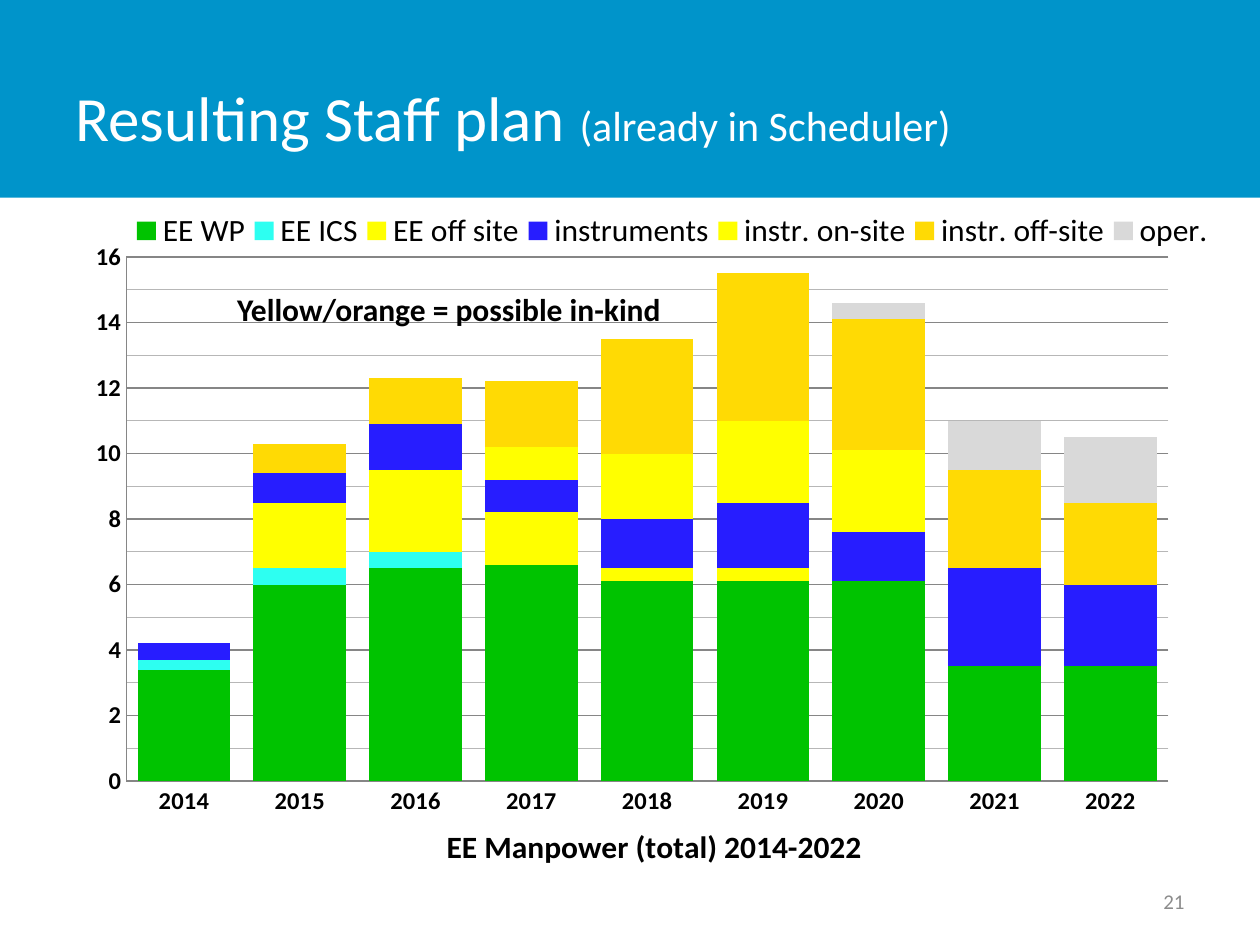
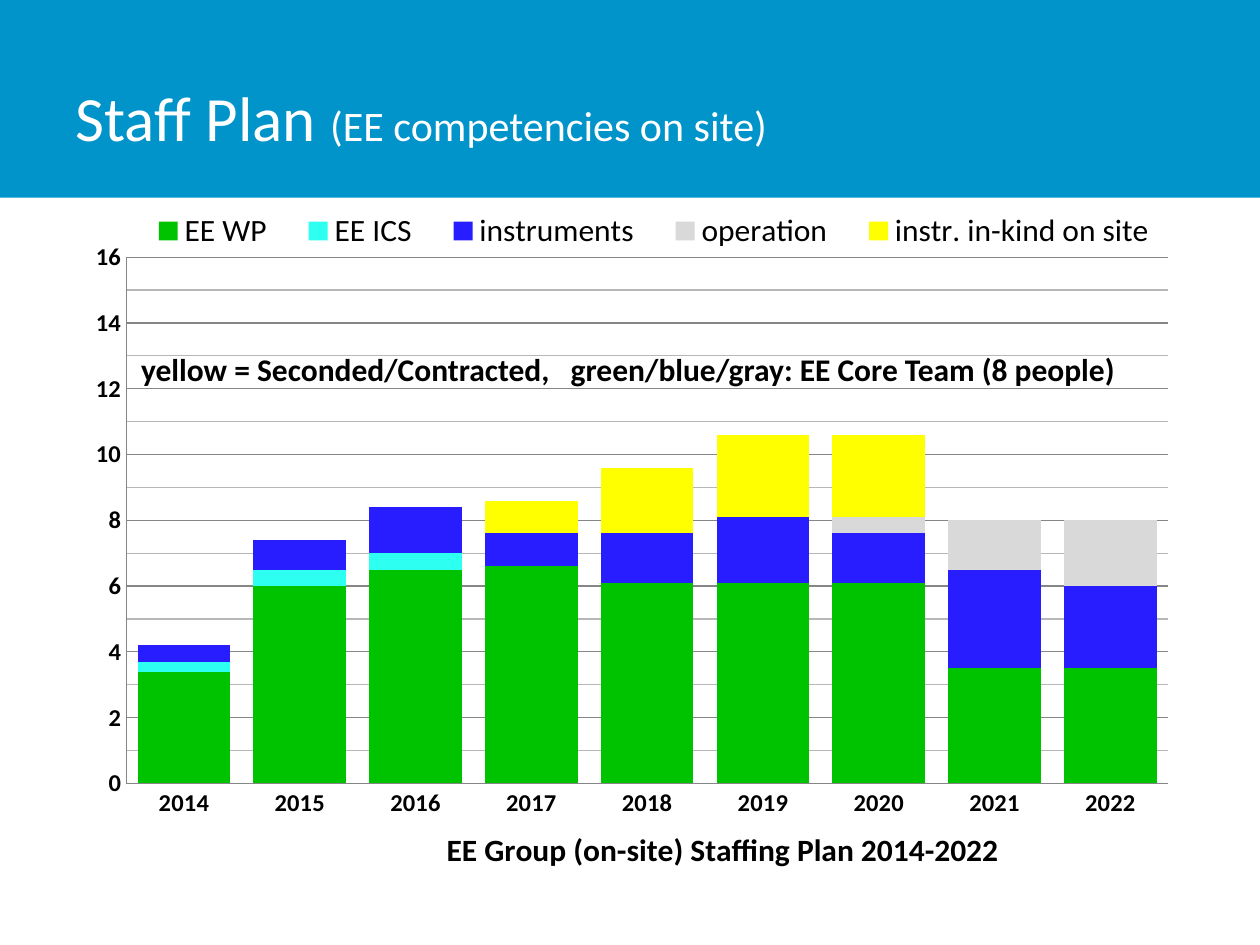
from lxml import etree
from pptx import Presentation
from pptx.chart.data import CategoryChartData
from pptx.dml.color import RGBColor
from pptx.enum.chart import XL_CHART_TYPE as ChartType, XL_LEGEND_POSITION as LegendPos
from pptx.enum.chart import XL_TICK_MARK as TickMark
from pptx.enum.shapes import MSO_SHAPE as Preset
from pptx.enum.text import MSO_ANCHOR as Anchor, MSO_AUTO_SIZE as AutoSize, PP_ALIGN as Align
from pptx.oxml.ns import qn
from pptx.util import Inches, Pt

FONT = "Calibri"
BAND_BLUE = RGBColor(0x00, 0x94, 0xCA)
WHITE = RGBColor(0xFF, 0xFF, 0xFF)
BLACK = RGBColor(0x00, 0x00, 0x00)
NUMBER_GRAY = RGBColor(0x8C, 0x8C, 0x8C)
MAJOR_GRAY = RGBColor(0x86, 0x86, 0x86)
MINOR_GRAY = RGBColor(0xB7, 0xB7, 0xB7)
GREEN = RGBColor(0x00, 0xC3, 0x00)
CYAN = RGBColor(0x2D, 0xFF, 0xF1)
YELLOW = RGBColor(0xFF, 0xFF, 0x00)
BLUE = RGBColor(0x27, 0x1D, 0xFF)
ORANGE = RGBColor(0xFF, 0xDA, 0x04)
LIGHT_GRAY = RGBColor(0xD9, 0xD9, 0xD9)

YEARS = [str(year) for year in range(2014, 2023)]
WORK_PACKAGE = ("EE WP", GREEN, [3.4, 6, 6.5, 6.6, 6.1, 6.1, 6.1, 3.5, 3.5])
CONTROLS = ("EE ICS", CYAN, [0.3, 0.5, 0.5] + [None] * 6)
INSTRUMENTS = ("instruments", BLUE, [0.5, 0.9, 1.4, 1, 1.5, 2, 1.5, 3, 2.5])
ON_SITE = [None] * 3 + [1, 2, 2.5, 2.5, None, None]
OPERATION = [None] * 6 + [0.5, 1.5, 2]

PLANS = [
    {
        "title": ("Resulting Staff plan ", "(already in Scheduler)"),
        "caption": "EE Manpower (total) 2014-2022",
        "chart_height": 5.4,
        "legend_width": 0.89,
        "note": "Yellow/orange = possible in-kind",
        "note_box": (0, 2.25, 7.13, 0.4),
        "number": "21",
        "staff": [
            WORK_PACKAGE,
            CONTROLS,
            ("EE off site", YELLOW, [0, 2, 2.5, 1.6, 0.4, 0.4, 0, 0, 0]),
            INSTRUMENTS,
            ("instr. on-site", YELLOW, ON_SITE),
            ("instr. off-site", ORANGE, [0, 0.9, 1.4, 2, 3.5, 4.5, 4, 3, 2.5]),
            ("oper.", LIGHT_GRAY, OPERATION),
        ],
    },
    {
        "title": ("Staff Plan ", "(EE competencies on site)"),
        "caption": "EE Group (on-site) Staffing Plan 2014-2022",
        "chart_height": 5.42,
        "legend_width": 0.86,
        "note": "yellow = Seconded/Contracted,\tgreen/blue/gray: EE Core Team (8 people)",
        "note_box": (0, 2.73, 10, 0.4),
        "note_indent": 1.12,
        "note_tab": 3.41,
        "staff": [
            WORK_PACKAGE,
            CONTROLS,
            INSTRUMENTS,
            ("operation", LIGHT_GRAY, OPERATION),
            ("instr. in-kind on site", YELLOW, ON_SITE),
        ],
    },
]


def set_font(font, size, color=BLACK, bold=False):
    values = {"name": FONT, "size": Pt(size), "bold": bold}
    for attribute, value in values.items():
        setattr(font, attribute, value)
    font.color.rgb = color


def place(part, index, **fractions):
    """Give a chart part a manual layout, in fractions of the chart area."""
    for old in part.findall(qn("c:layout")):
        part.remove(old)
    layout = etree.Element(qn("c:layout"))
    manual = etree.SubElement(layout, qn("c:manualLayout"))
    if part.tag == qn("c:plotArea"):
        etree.SubElement(manual, qn("c:layoutTarget")).set("val", "inner")
    for mode in ("xMode", "yMode"):
        etree.SubElement(manual, qn(f"c:{mode}")).set("val", "edge")
    for name, value in fractions.items():
        etree.SubElement(manual, qn(f"c:{name}")).set("val", str(value))
    part.insert(index, layout)


prs = Presentation()
prs.slide_width, prs.slide_height = Inches(10), Inches(7.5)
title_only = prs.slide_layouts[5]
slides = [prs.slides.add_slide(title_only) for _ in PLANS]

# The band belongs to the layout, behind its placeholders
band = slides[0].shapes.add_shape(Preset.RECTANGLE, 0, 0, prs.slide_width, Inches(1.57))
band.shadow.inherit = False
band.fill.solid()
band.fill.fore_color.rgb = BAND_BLUE
band.line.fill.background()
title_only.shapes._spTree.insert(2, band._element)

for slide, plan in zip(slides, PLANS):
    title = slide.shapes.title
    title.left, title.top = Inches(0.5), Inches(0.3)
    title.width, title.height = Inches(7.81), Inches(1.25)
    title.text_frame.auto_size = AutoSize.NONE
    title.text_frame.vertical_anchor = Anchor.MIDDLE
    heading = title.text_frame.paragraphs[0]
    heading.alignment = Align.LEFT
    for words, size in zip(plan["title"], (36, 24)):
        run = heading.add_run()
        run.text = words
        set_font(run.font, size, WHITE)

    # Staff chart
    data = CategoryChartData(number_format="General")
    data.categories = YEARS
    for name, _, values in plan["staff"]:
        data.add_series(name, values)
    staff_frame = slide.shapes.add_chart(
        ChartType.COLUMN_STACKED, 0, Inches(1.55), Inches(9.72),
        Inches(plan["chart_height"]), data)
    chart = staff_frame.chart
    set_font(chart.font, 10)

    columns = chart.plots[0]
    columns.gap_width, columns.overlap = 25, 100
    columns.vary_by_categories = False
    for series, (_, color, _) in zip(columns.series, plan["staff"]):
        series.format.fill.solid()
        series.format.fill.fore_color.rgb = color
        series.invert_if_negative = False

    for axis in (chart.category_axis, chart.value_axis):
        axis.major_tick_mark = axis.minor_tick_mark = TickMark.NONE
        axis.format.line.color.rgb = MAJOR_GRAY
        set_font(axis.tick_labels.font, 14, bold=True)
    staff_axis = chart.value_axis
    scale = {"minimum_scale": 0, "maximum_scale": 16, "major_unit": 2, "minor_unit": 1,
             "has_major_gridlines": True, "has_minor_gridlines": True}
    for attribute, value in scale.items():
        setattr(staff_axis, attribute, value)
    staff_axis.tick_labels.number_format = "#,##0"
    staff_axis.tick_labels.number_format_is_linked = False
    staff_axis.major_gridlines.format.line.color.rgb = MAJOR_GRAY
    staff_axis.major_gridlines.format.line.width = Pt(0.75)
    minor_lines = staff_axis._element.find(qn("c:minorGridlines"))
    minor_format = etree.SubElement(minor_lines, qn("c:spPr"))
    minor_line = etree.SubElement(minor_format, qn("a:ln"), w=str(Pt(0.75)))
    minor_fill = etree.SubElement(minor_line, qn("a:solidFill"))
    etree.SubElement(minor_fill, qn("a:srgbClr"), val=str(MINOR_GRAY))

    chart.has_title = True
    caption = chart.chart_title.text_frame.paragraphs[0].add_run()
    caption.text = plan["caption"]
    set_font(caption.font, 18, bold=True)
    chart.has_legend = True
    chart.legend.position = LegendPos.BOTTOM
    chart.legend.include_in_layout = False
    set_font(chart.legend.font, 18)

    plot_area = chart._chartSpace.find(".//" + qn("c:plotArea"))
    place(plot_area, 0, x=0.103, y=0.092, w=0.851, h=0.781)
    place(chart.chart_title._element, 1, x=0.36, y=0.93)
    place(chart.legend._element, 1, x=0.104, y=0.018, w=plan["legend_width"], h=0.07)

    # Note across the chart
    note = slide.shapes.add_textbox(*map(Inches, plan["note_box"]))
    note.text_frame.word_wrap = True
    note.text_frame.vertical_anchor = Anchor.MIDDLE
    remark = note.text_frame.paragraphs[0]
    remark.alignment = Align.CENTER
    if "note_tab" in plan:
        remark.alignment = Align.LEFT
        note.text_frame.margin_left = Inches(plan["note_indent"])
        tabs = etree.SubElement(remark._p.get_or_add_pPr(), qn("a:tabLst"))
        etree.SubElement(tabs, qn("a:tab"), pos=str(Inches(plan["note_tab"])), algn="l")
        staff_frame._element.addprevious(note._element)
    run = remark.add_run()
    run.text = plan["note"]
    set_font(run.font, 18, bold=True)

    if "number" in plan:
        number_box = slide.shapes.add_textbox(
            Inches(7.17), Inches(6.95), Inches(2.33), Inches(0.4))
        number_box.text_frame.word_wrap = True
        number_box.text_frame.vertical_anchor = Anchor.MIDDLE
        number = number_box.text_frame.paragraphs[0]
        number.alignment = Align.RIGHT
        run = number.add_run()
        run.text = plan["number"]
        set_font(run.font, 12, NUMBER_GRAY)

prs.save("out.pptx")
